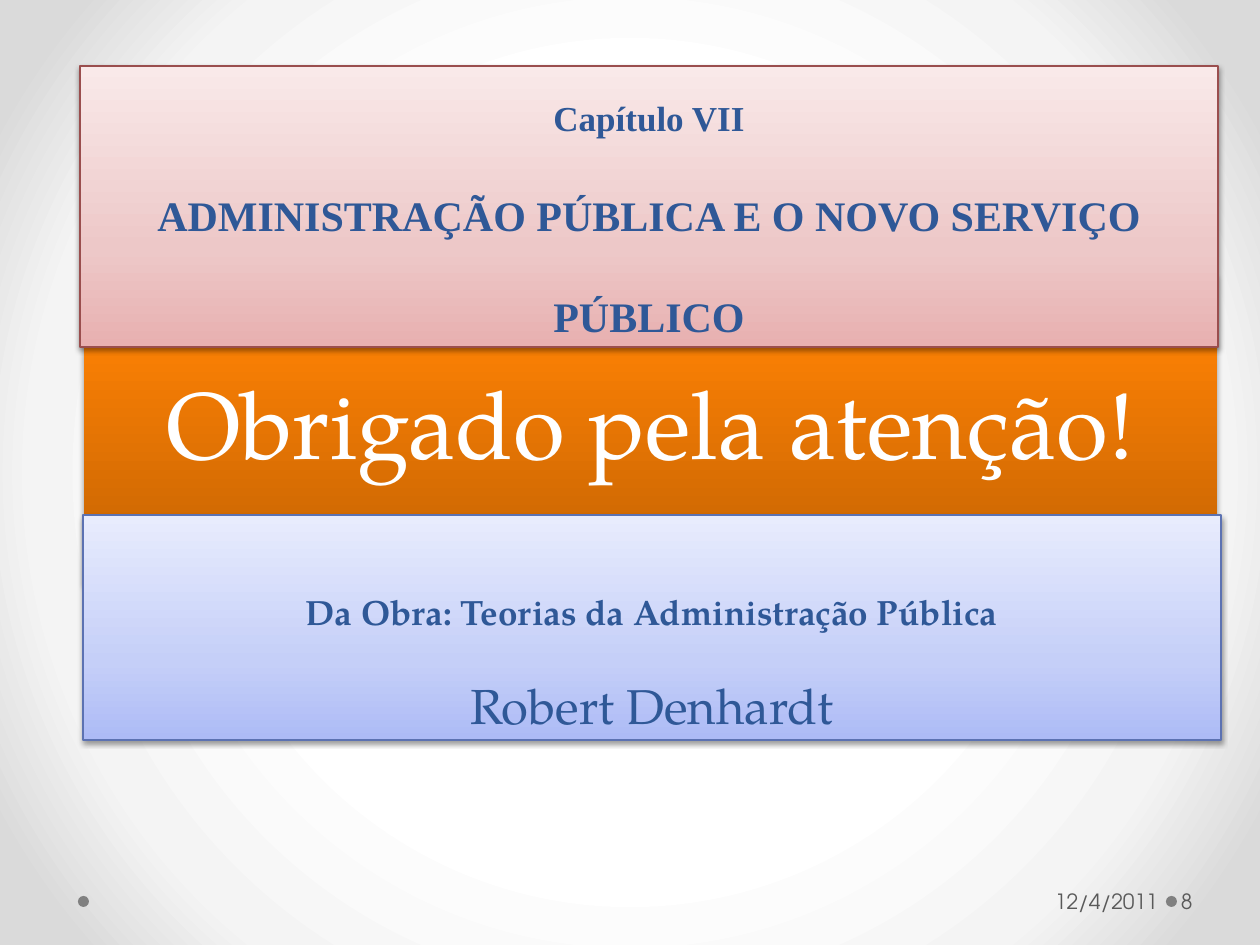
from lxml.etree import SubElement
from pptx import Presentation
from pptx.dml.color import RGBColor
from pptx.enum.shapes import MSO_SHAPE
from pptx.enum.text import MSO_ANCHOR, MSO_AUTO_SIZE, PP_ALIGN
from pptx.oxml.ns import qn
from pptx.util import Emu, Pt

SERIF, PAGELLA, ADVENTOR = "Times New Roman", "TeX Gyre Pagella", "TeX Gyre Adventor"
NAVY, GREY, DOT = "2F5897", "595959", "808080"
BACKDROP = [(50, "FFFFFF"), (76, "F4F4F4"), (92, "DADADA")]

THANKS = dict(
    box=(84, 275, 1133, 310), insets=(13, 6, 13, 107),
    stops=[(0, "C26203"), (80, "FB8004"), (100, "FF8002")],
    line=None, shadow=(35, 3.1, 1.8),
    paragraphs=[("Obrigado pela atenção!", 54, PAGELLA, "FFFFFF", False)])
PANELS = [
    dict(box=(80, 66, 1138, 281), insets=(13, 6, 13, 6),
         stops=[(0, "E8B0B0"), (35, "EDC8C8"), (100, "F9E9E9")],
         line="9A4E4E", shadow=(38, 3.1, 1.6),
         paragraphs=[
             ("Capítulo VII", 20, SERIF, NAVY, True),
             ("ADMINISTRAÇÃO PÚBLICA E O NOVO SERVIÇO PÚBLICO", 24, SERIF, NAVY, True)]),
    dict(box=(83, 515, 1138, 225), insets=(13, 6, 13, 6),
         stops=[(0, "ADBBF6"), (35, "C5CFF8"), (100, "E8ECFD")],
         line="5C72B2", shadow=(38, 3.1, 1.6),
         paragraphs=[
             ("Da Obra: Teorias da Administração Pública", 20, PAGELLA, NAVY, True),
             ("Robert Denhardt", 28, PAGELLA, NAVY, False)]),
]
FOOTERS = [
    ("12/4/2011", (877, 876, 287, 50), (13, 6, 6, 6), PP_ALIGN.RIGHT),
    ("8", (1177, 876, 77, 50), (4, 6, 6, 6), PP_ALIGN.LEFT),
]
DOTS = [(1166, 896, 11, 11), (78, 896, 11, 11)]


def px(value):
    return Emu(round(value * 914400 / 126))


def color(value):
    return RGBColor.from_string(value)


def place(shape, box):
    for side, value in zip(("left", "top", "width", "height"), box):
        setattr(shape, side, px(value))


def set_gradient(holder, fill, stops, radial=False):
    fill.gradient()
    gradient = holder.find(".//" + qn("a:gradFill"))
    for child in list(gradient):
        gradient.remove(child)
    stop_list = SubElement(gradient, qn("a:gsLst"))
    for position, value in stops:
        stop = SubElement(stop_list, qn("a:gs"), pos=str(position * 1000))
        SubElement(stop, qn("a:srgbClr"), val=value)
    if radial:
        circle = SubElement(gradient, qn("a:path"), path="circle")
        SubElement(circle, qn("a:fillToRect"), l="50000", t="50000", r="50000", b="50000")
    else:
        SubElement(gradient, qn("a:lin"), ang="16200000", scaled="0")


def set_shadow(shape, opacity, blur, distance):
    shape.shadow.inherit = False
    effects = shape.element.spPr.find(qn("a:effectLst"))
    outer = SubElement(effects, qn("a:outerShdw"), blurRad=str(Pt(blur)), dist=str(Pt(distance)),
                       dir="5400000", rotWithShape="0")
    tint = SubElement(outer, qn("a:srgbClr"), val="000000")
    SubElement(tint, qn("a:alpha"), val=str(opacity * 1000))


def write(shape, paragraphs, insets, anchor, align, spacing=None):
    frame = shape.text_frame
    frame.text = "\n".join(text for text, *_ in paragraphs)
    settings = dict(word_wrap=True, auto_size=MSO_AUTO_SIZE.NONE, vertical_anchor=anchor)
    settings.update(zip(("margin_left", "margin_top", "margin_right", "margin_bottom"),
                        map(px, insets)))
    for name, value in settings.items():
        setattr(frame, name, value)
    for paragraph, (_, size, face, ink, bold) in zip(frame.paragraphs, paragraphs):
        paragraph.alignment = align
        paragraph.line_spacing = spacing
        font = paragraph.runs[0].font
        for name, value in dict(size=Pt(size), name=face, bold=bold).items():
            setattr(font, name, value)
        font.color.rgb = color(ink)


def format_panel(shape, panel):
    place(shape, panel["box"])
    set_gradient(shape.element.spPr, shape.fill, panel["stops"])
    if panel["line"]:
        shape.line.color.rgb = color(panel["line"])
        shape.line.width = Pt(0.75)
    else:
        shape.line.fill.background()
    set_shadow(shape, *panel["shadow"])
    write(shape, panel["paragraphs"], panel["insets"], MSO_ANCHOR.BOTTOM, PP_ALIGN.CENTER, Pt(58))


def main():
    deck = Presentation()
    deck.slide_width, deck.slide_height = px(1260), px(945)
    slide = deck.slides.add_slide(deck.slide_layouts[5])
    set_gradient(slide.element, slide.background.fill, BACKDROP, radial=True)
    shapes = slide.shapes

    format_panel(shapes.title, THANKS)
    for panel in PANELS:
        format_panel(shapes.add_shape(MSO_SHAPE.RECTANGLE, *map(px, panel["box"])), panel)

    for box in DOTS:
        dot = shapes.add_shape(MSO_SHAPE.OVAL, *map(px, box))
        dot.fill.solid()
        dot.fill.fore_color.rgb = color(DOT)
        dot.line.fill.background()
        dot.shadow.inherit = False
    for text, box, insets, align in FOOTERS:
        footer = shapes.add_textbox(*map(px, box))
        write(footer, [(text, 12, ADVENTOR, GREY, False)], insets, MSO_ANCHOR.MIDDLE, align)

    deck.save("out.pptx")


if __name__ == "__main__":
    main()
